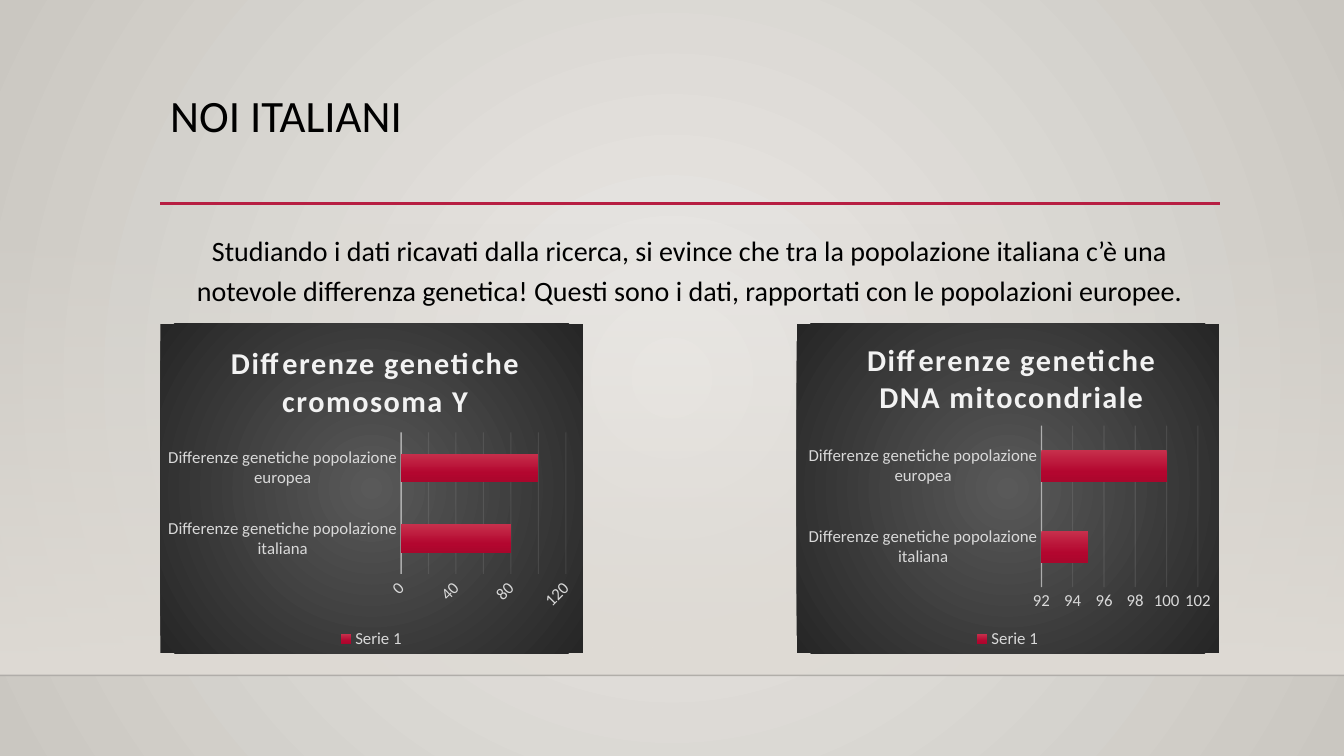
from lxml import etree
from pptx import Presentation, util as u
from pptx.chart.data import CategoryChartData
from pptx.dml.color import RGBColor
from pptx.enum import chart as charts, shapes, text
from pptx.oxml import parse_xml
from pptx.oxml.ns import nsdecls, qn

BLACK = RGBColor(0, 0, 0)
FLOOR = RGBColor(0, 0, 1)
RED = RGBColor(0xB7, 0x1E, 0x42)
PALE = RGBColor(0xF2, 0xF2, 0xF2)
LABEL = RGBColor(0xD9, 0xD9, 0xD9)
BEIGE = RGBColor(0xDF, 0xDB, 0xD5)
BACKDROP = [(0, RGBColor(0xEC, 0xEA, 0xE7)), (100, RGBColor(0xCA, 0xC7, 0xC1))]
PANEL = [(0, RGBColor(0x59, 0x59, 0x59)), (100, RGBColor(0x26, 0x26, 0x26))]
BAR = [(0, RGBColor(0xC7, 0x30, 0x4C)), (69, RGBColor(0xB3, 0x06, 0x2F)),
       (100, RGBColor(0xAA, 0x06, 0x2C))]
WALL = [(0, BEIGE, 0), (100, BEIGE)]
FONT = "Calibri"

TEXTS = [
    ("NOI ITALIANI", (1.59, 0.88, 10.5, 1.15), 32, 0.9, text.PP_ALIGN.LEFT),
    ("Studiando i dati ricavati dalla ricerca, si evince che tra la popolazione italiana "
     "c’è una notevole differenza genetica! Questi sono i dati, rapportati con le "
     "popolazioni europee.", (1.59, 2.2, 10.5, 1), 20, 1.2, text.PP_ALIGN.CENTER),
]
LINES = [(0, 13.33, 6.7, FLOOR, 1, 20), (1.59, 12.1, 2.02, RED, 2.5, 100)]
CATEGORIES = ["Differenze genetiche popolazione italiana",
              "Differenze genetiche popolazione europea"]
CHARTS = [
    {"left": 1.59, "title": "Differenze genetiche\ncromosoma Y", "values": (80, 100),
     "scale": (0, 120, 20), "rotation": -45,
     "title_at": (0.16, 0.05), "plot_at": (0.57, 0.33, 0.39, 0.43)},
    {"left": 7.9, "title": "Differenze genetiche\nDNA mitocondriale", "values": (95, 100),
     "scale": (92, 102, 2), "rotation": 0,
     "title_at": (0.16, 0.04), "plot_at": (0.58, 0.31, 0.37, 0.49)},
]


def apply(target, **values):
    for name, value in values.items():
        setattr(target, name, value)


def set_font(font, size, color, **values):
    apply(font, name=FONT, size=u.Pt(size), **values)
    font.color.rgb = color


def set_alpha(element, percent):
    for color in element.iter(qn("a:srgbClr")):
        etree.SubElement(color, qn("a:alpha")).set("val", str(percent * 1000))


def set_line(line, holder, color, width, alpha):
    line.color.rgb = color
    line.width = u.Pt(width)
    if alpha < 100:
        set_alpha(holder, alpha)


def set_gradient(fill, holder, stops, circle=False):
    fill.solid()
    gradient = parse_xml(f'<a:gradFill {nsdecls("a")} rotWithShape="1"><a:gsLst/></a:gradFill>')
    for position, color, *alpha in stops:
        stop = etree.SubElement(gradient[0], qn("a:gs"), pos=str(position * 1000))
        etree.SubElement(stop, qn("a:srgbClr"), val=str(color))
        if alpha:
            set_alpha(stop, alpha[0])
    if circle:
        route = etree.SubElement(gradient, qn("a:path"), {"path": "circle"})
        etree.SubElement(route, qn("a:fillToRect"), dict.fromkeys("ltrb", "50000"))
    else:
        etree.SubElement(gradient, qn("a:lin"), ang="5400000", scaled="0")
    solid = next(holder.iter(qn("a:solidFill")))
    solid.getparent().replace(solid, gradient)


def set_layout(element, place, inner=False):
    layout = element.find(qn("c:layout"))
    if layout is None:
        layout = parse_xml(f'<c:layout {nsdecls("c")}/>')
        if inner:
            element.insert(0, layout)
        else:
            element.find(qn("c:tx")).addnext(layout)
    manual = etree.SubElement(layout, qn("c:manualLayout"))
    if inner:
        etree.SubElement(manual, qn("c:layoutTarget"), val="inner")
    for name in ("xMode", "yMode"):
        etree.SubElement(manual, qn(f"c:{name}"), val="edge")
    for name, value in zip("xywh", place):
        etree.SubElement(manual, qn(f"c:{name}"), val=str(value))


def add_text(slide, words, place, size, spacing, alignment):
    frame = slide.shapes.add_textbox(*map(u.Inches, place)).text_frame
    apply(frame, word_wrap=True, vertical_anchor=text.MSO_ANCHOR.TOP)
    paragraph = frame.paragraphs[0]
    apply(paragraph, text=words, alignment=alignment, line_spacing=spacing)
    set_font(paragraph.runs[0].font, size, BLACK)


def add_line(slide, start, end, y, color, width, alpha):
    line = slide.shapes.add_connector(
        shapes.MSO_CONNECTOR.STRAIGHT, *map(u.Inches, (start, y, end, y)))
    set_line(line.line, line.element.spPr, color, width, alpha)
    etree.SubElement(line.element.spPr, qn("a:effectLst"))


def add_bar_chart(slide, content):
    data = CategoryChartData()
    data.categories = CATEGORIES
    data.add_series("Serie 1", content["values"])
    chart = slide.shapes.add_chart(
        charts.XL_CHART_TYPE.BAR_STACKED,
        *map(u.Inches, (content["left"], 3.21, 4.19, 3.27)), data).chart
    set_font(chart.font, 10, BLACK)
    chart_space = chart.element if hasattr(chart, "element") else chart._chartSpace
    panel = parse_xml(f'<c:spPr {nsdecls("c", "a")}><a:solidFill/><a:ln><a:noFill/></a:ln></c:spPr>')
    chart_space.find(qn("c:chart")).addnext(panel)
    from_panel = slide.background.fill
    set_gradient(from_panel, panel, PANEL, True)

    chart.has_title = True
    chart.chart_title.include_in_layout = False
    frame = chart.chart_title.text_frame
    frame.text = content["title"]
    for paragraph in frame.paragraphs:
        paragraph.alignment = text.PP_ALIGN.CENTER
        font = paragraph.runs[0].font
        set_font(font, 21.6, PALE, bold=True)
        paragraph.runs[0]._r.get_or_add_rPr().set("spc", "100")
    set_layout(chart_space.find(".//" + qn("c:title")), content["title_at"])
    set_layout(chart_space.find(".//" + qn("c:plotArea")), content["plot_at"], True)

    chart.has_legend = True
    apply(chart.legend, position=charts.XL_LEGEND_POSITION.BOTTOM, include_in_layout=False)
    set_font(chart.legend.font, 12, LABEL)

    category, value = chart.category_axis, chart.value_axis
    for axis in (category, value):
        apply(axis, major_tick_mark=charts.XL_TICK_MARK.NONE,
              minor_tick_mark=charts.XL_TICK_MARK.NONE)
        set_font(axis.tick_labels.font, 12, LABEL)
    set_line(category.format.line, category._element.find(qn("c:spPr")), PALE, 1, 54)
    low, high, step = content["scale"]
    apply(value, minimum_scale=low, maximum_scale=high, major_unit=step,
          has_major_gridlines=True)
    value.format.line.fill.background()
    set_line(value.major_gridlines.format.line,
             value._element.find(qn("c:majorGridlines")), PALE, 0.75, 10)
    body = value._element.find(qn("c:txPr")).find(qn("a:bodyPr"))
    body.set("rot", str(content["rotation"] * 60000))

    plot = chart.plots[0]
    apply(plot, gap_width=150, overlap=100, vary_by_categories=False)
    series = plot.series[0]
    set_gradient(series.format.fill, series._element, BAR)


def main():
    presentation = Presentation()
    apply(presentation, slide_width=u.Inches(13.33), slide_height=u.Inches(7.5))
    slide = presentation.slides.add_slide(presentation.slide_layouts[6])
    wall = slide.shapes.add_shape(
        shapes.MSO_SHAPE.RECTANGLE, *map(u.Inches, (0, 2.21, 13.33, 4.49)))
    wall.shadow.inherit = False
    wall.line.fill.background()
    set_gradient(wall.fill, wall.element.spPr, WALL)
    for line in LINES:
        add_line(slide, *line)
    for words in TEXTS:
        add_text(slide, *words)
    for content in CHARTS:
        add_bar_chart(slide, content)
    set_gradient(slide.background.fill, slide.element.find(".//" + qn("p:bg")), BACKDROP, True)
    presentation.save("out.pptx")


if __name__ == "__main__":
    main()
